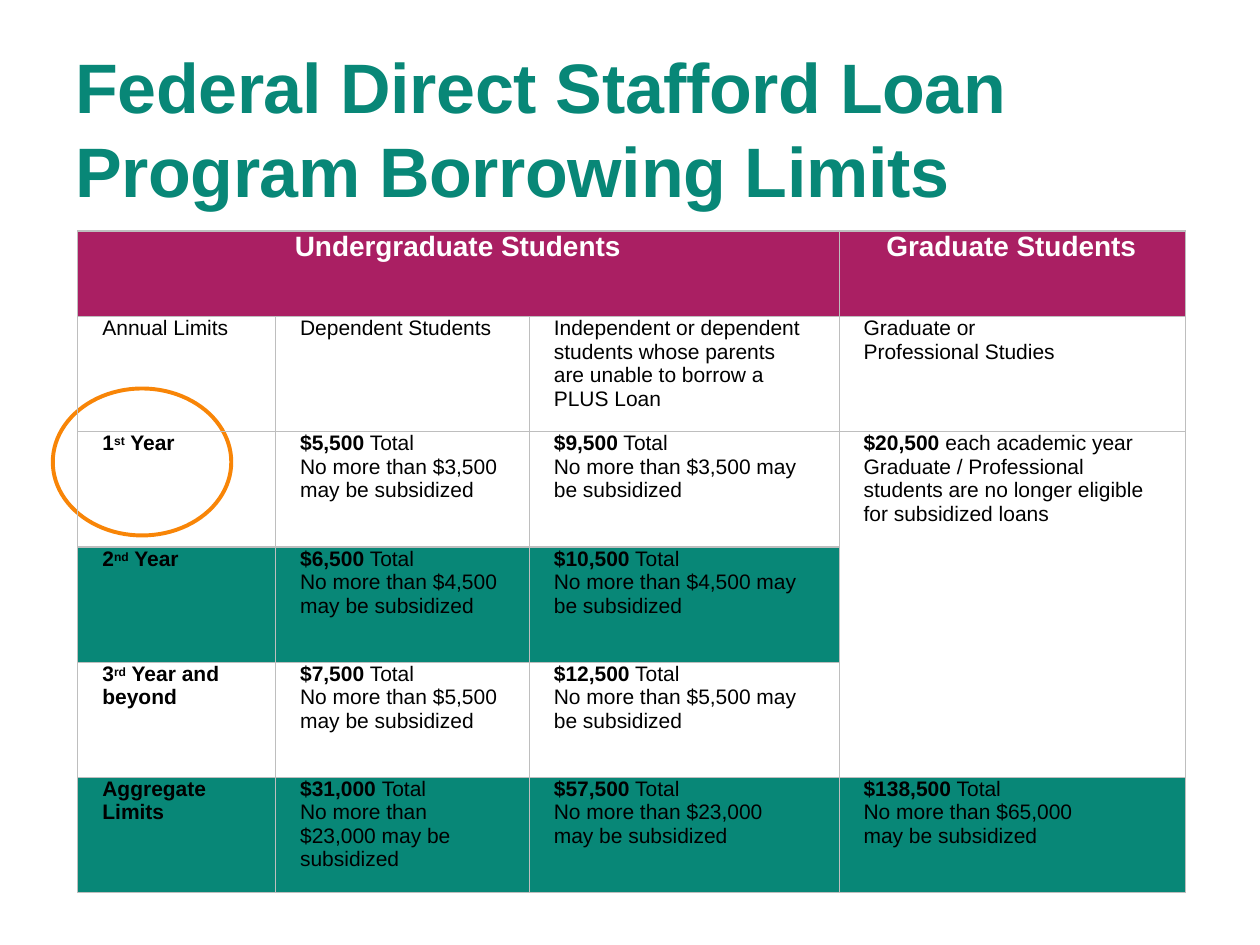
from lxml.etree import SubElement as add_element
from pptx import Presentation
from pptx.dml.color import RGBColor
from pptx.enum.shapes import MSO_SHAPE as Shape
from pptx.oxml.ns import qn
from pptx.util import Pt

COLORS = {
    "teal": "088777",
    "magenta": "AA1F63",
    "orange": "F88507",
    "grid": "BEBEBE",
    "white": "FFFFFF",
    "black": "000000",
}
COLUMNS = [113, 145, 177, 198]
ROWS = [49] + [65.8] * 5
RIGHT_MARGINS = [15, 8, 20, 16]


def rgb(name):
    return RGBColor.from_string(COLORS[name])


def add_span(para, text, size=12, color="black", bold=False, raised=False, spacing=0):
    span = para.add_run()
    span.text = text
    font = span.font
    font.name = "Arial"
    font.size = Pt(size)
    font.bold = bold
    font.color.rgb = rgb(color)
    props = span._r.get_or_add_rPr()
    if raised:
        props.set("baseline", "24000")
    if spacing:
        props.set("spc", str(round(spacing * 100)))


def bold(text):
    return text, {"bold": True}


def year(number, suffix, rest=" Year"):
    return [[bold(number), (suffix, {"bold": True, "raised": True}), bold(rest)]]


def limit(total, subsidized):
    return [
        [bold(total), (" Total", {})],
        [(f"No more than {subsidized} may be subsidized", {})],
    ]


def plain(text):
    return [[(text, {})]]


class Deck:
    def __init__(self):
        self.deck = Presentation()
        self.deck.slide_width, self.deck.slide_height = Pt(720), Pt(540)
        self.page = self.deck.slides.add_slide(self.deck.slide_layouts[6])

    def title(self, lines, left, top, width, height):
        box = self.page.shapes.add_textbox(Pt(left), Pt(top), Pt(width), Pt(height))
        frame = box.text_frame
        frame.word_wrap = True
        frame.margin_left = frame.margin_right = 0
        frame.margin_top = frame.margin_bottom = 0
        for index, line in enumerate(lines):
            para = frame.add_paragraph() if index else frame.paragraphs[0]
            para.line_spacing = Pt(48)
            add_span(para, line, size=40, color="teal", bold=True, spacing=-0.2)

    def ring(self, left, top, width, height):
        oval = self.page.shapes.add_shape(
            Shape.OVAL, Pt(left), Pt(top), Pt(width), Pt(height)
        )
        oval.shadow.inherit = False
        oval.fill.background()
        oval.line.color.rgb = rgb("orange")
        oval.line.width = Pt(2.25)

    def table(self, left, top):
        table = self.page.shapes.add_table(
            len(ROWS), len(COLUMNS), Pt(left), Pt(top), Pt(sum(COLUMNS)), Pt(sum(ROWS))
        ).table
        table.first_row = table.horz_banding = False
        for column, width in zip(table.columns, COLUMNS):
            column.width = Pt(width)
        for row, height in zip(table.rows, ROWS):
            row.height = Pt(height)
        for cell in table.iter_cells():
            cell.margin_left = cell.margin_right = 0
            cell.margin_top = cell.margin_bottom = 0
            self.borders(cell)
            cell.fill.background()
        return table

    def borders(self, cell):
        props = cell._tc.get_or_add_tcPr()
        for side in ("a:lnL", "a:lnR", "a:lnT", "a:lnB"):
            line = add_element(props, qn(side), w=str(Pt(0.75)))
            fill = add_element(line, qn("a:solidFill"))
            add_element(fill, qn("a:srgbClr"), val=COLORS["grid"])

    def cell(self, cell, paras, indent=14, right=0, fill=None):
        cell.margin_right = Pt(right)
        if fill:
            cell.fill.solid()
            cell.fill.fore_color.rgb = rgb(fill)
        frame = cell.text_frame
        for index, spans in enumerate(paras):
            para = frame.add_paragraph() if index else frame.paragraphs[0]
            para._p.get_or_add_pPr().set("marL", str(Pt(indent)))
            for text, style in spans:
                add_span(para, text, **style)


def main():
    deck = Deck()
    deck.title(
        ["Federal Direct Stafford Loan", "Program Borrowing Limits"], 43, 25, 540, 96
    )
    deck.ring(30.2, 222, 102, 84)

    table = deck.table(44.5, 132)
    table.cell(0, 0).merge(table.cell(0, 2))
    table.cell(2, 3).merge(table.cell(4, 3))

    header = {"size": 16, "color": "white", "bold": True}
    for column, text, indent in (
        (0, "Undergraduate Students", 124),
        (3, "Graduate Students", 27),
    ):
        deck.cell(table.cell(0, column), [[(text, header)]], indent, fill="magenta")

    graduate = [[
        bold("$20,500 "),
        ("each academic year Graduate / Professional students are no longer "
         "eligible for subsidized loans", {}),
    ]]
    dependent_aggregate = [
        [bold("$31,000 "), ("Total No more than", {})],
        [("$23,000 may be subsidized", {})],
    ]
    body = [
        [
            plain("Annual Limits"),
            plain("Dependent Students"),
            plain("Independent or dependent students whose parents "
                  "are unable to borrow a PLUS Loan"),
            plain("Graduate or Professional Studies"),
        ],
        [year("1", "st"), limit("$5,500", "$3,500"), limit("$9,500", "$3,500"), graduate],
        [year("2", "nd"), limit("$6,500", "$4,500"), limit("$10,500", "$4,500")],
        [
            year("3", "rd", " Year and beyond"),
            limit("$7,500", "$5,500"),
            limit("$12,500", "$5,500"),
        ],
        [
            [[bold("Aggregate Limits")]],
            dependent_aggregate,
            limit("$57,500", "$23,000"),
            limit("$138,500", "$65,000"),
        ],
    ]
    narrow = {(1, 3): 65, (5, 1): 43, (5, 3): 51}
    for row, contents in enumerate(body, start=1):
        fill = "teal" if row in (3, 5) else None
        for column, paras in enumerate(contents):
            right = narrow.get((row, column), RIGHT_MARGINS[column])
            deck.cell(table.cell(row, column), paras, right=right, fill=fill)

    deck.deck.save("out.pptx")


if __name__ == "__main__":
    main()
